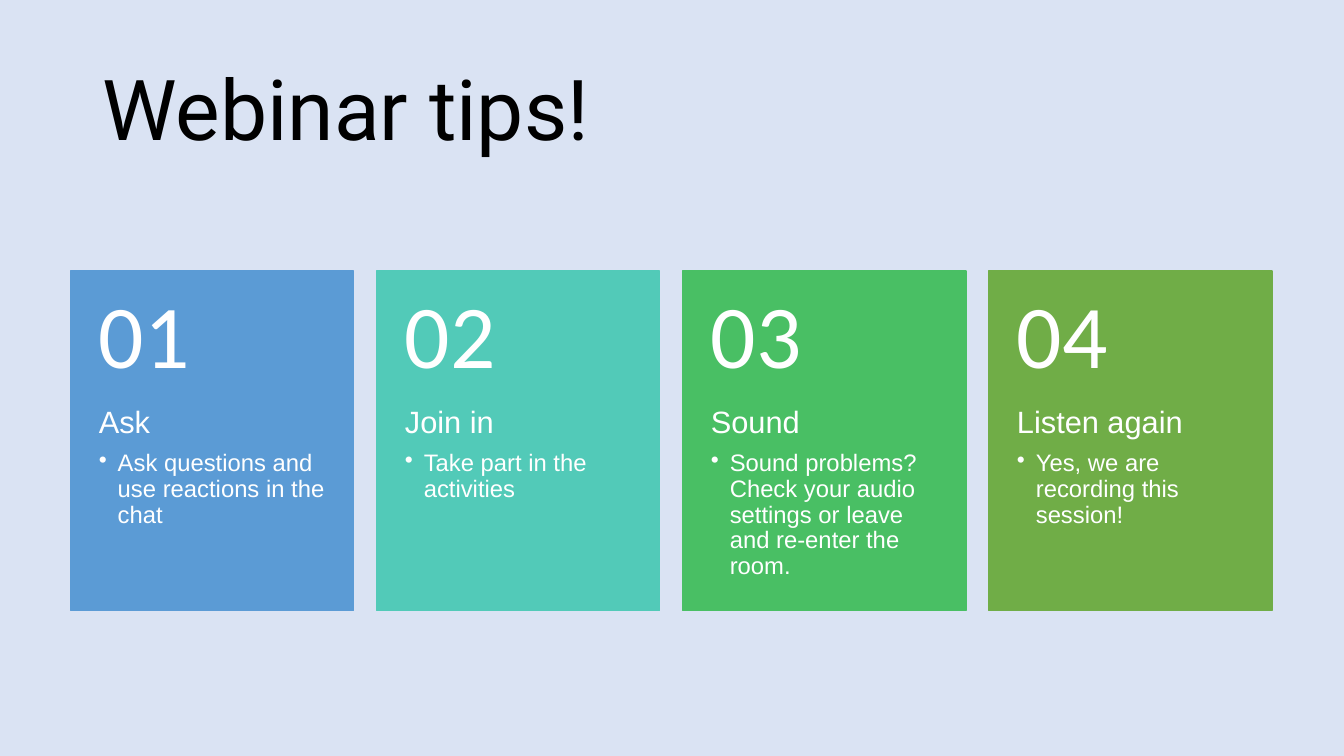
from dataclasses import dataclass

from lxml import etree
from pptx import Presentation
from pptx.dml.color import RGBColor
from pptx.enum import shapes, text
from pptx.oxml import ns
from pptx.util import Pt


@dataclass(frozen=True)
class Theme:
    background: str = "DAE3F3"
    title: str = "000000"
    card_text: str = "FFFFFF"
    title_size: int = 60
    number_size: int = 64
    heading_size: int = 22
    tip_size: int = 17


THEME = Theme()
CARD_LEFT, CARD_TOP = 50.4, 193.7
CARD_WIDTH, CARD_HEIGHT = 202.3, 242.6
CARD_PITCH = 218.6
NUMBER_HEIGHT = 97.1
SIDE_INSET = 20.2

TIPS = [
    ("5B9BD5", "Ask", "Ask questions and use reactions in the chat"),
    ("52CAB8", "Join in", "Take part in the activities"),
    ("49BF64", "Sound",
     "Sound problems? Check your audio settings or leave and re-enter the room."),
    ("70AD47", "Listen again", "Yes, we are recording this session!"),
]


def write(para, words, *, size, font, color, after=0, bullet=False):
    if bullet:
        properties = para._p.get_or_add_pPr()
        properties.set("marL", str(Pt(13.5)))
        properties.set("indent", str(Pt(-13.5)))
        etree.SubElement(properties, ns.qn("a:buChar")).set("char", "•")
    para.alignment = text.PP_ALIGN.LEFT
    para.line_spacing = 0.9
    para.space_before = Pt(0)
    para.space_after = Pt(after)
    span = para.add_run()
    span.text = words
    span.font.size = Pt(size)
    span.font.name = font
    span.font.color.rgb = RGBColor.from_string(color)


def add_card_text(page, left, top, height, *, inset_top, inset_bottom, anchor):
    box = page.shapes.add_textbox(Pt(left), Pt(top), Pt(CARD_WIDTH), Pt(height))
    frame = box.text_frame
    frame.word_wrap = True
    frame.vertical_anchor = anchor
    frame.margin_left = frame.margin_right = Pt(SIDE_INSET)
    frame.margin_top, frame.margin_bottom = Pt(inset_top), Pt(inset_bottom)
    return frame


deck = Presentation()
deck.slide_width, deck.slide_height = Pt(960), Pt(540)
page = deck.slides.add_slide(deck.slide_layouts[5])
page.background.fill.solid()
page.background.fill.fore_color.rgb = RGBColor.from_string(THEME.background)

title = page.shapes.title
title.left, title.top, title.width, title.height = Pt(66), Pt(28.75), Pt(828), Pt(104.4)
title.text_frame.auto_size = text.MSO_AUTO_SIZE.NONE
title.text_frame.vertical_anchor = text.MSO_ANCHOR.MIDDLE
write(title.text_frame.paragraphs[0], "Webinar tips!",
      size=THEME.title_size, font="Roboto", color=THEME.title)

for index, (color, heading, tip) in enumerate(TIPS):
    left = CARD_LEFT + index * CARD_PITCH
    card = page.shapes.add_shape(shapes.MSO_SHAPE.RECTANGLE, Pt(left), Pt(CARD_TOP),
                                 Pt(CARD_WIDTH), Pt(CARD_HEIGHT))
    card.shadow.inherit = False
    card.fill.solid()
    card.fill.fore_color.rgb = RGBColor.from_string(color)
    card.line.color.rgb = RGBColor.from_string(color)
    card.line.width = Pt(1)

    body = add_card_text(page, left, CARD_TOP + NUMBER_HEIGHT, CARD_HEIGHT - NUMBER_HEIGHT,
                         inset_top=0, inset_bottom=26, anchor=text.MSO_ANCHOR.TOP)
    write(body.paragraphs[0], heading, size=THEME.heading_size, font="Arial",
          color=THEME.card_text, after=7.7)
    write(body.add_paragraph(), tip, size=THEME.tip_size, font="Arial",
          color=THEME.card_text, after=2.55, bullet=True)

    number = add_card_text(page, left, CARD_TOP, NUMBER_HEIGHT,
                           inset_top=13, inset_bottom=13, anchor=text.MSO_ANCHOR.MIDDLE)
    write(number.paragraphs[0], f"{index + 1:02d}", size=THEME.number_size,
          font="Calibri", color=THEME.card_text)

deck.save("out.pptx")
